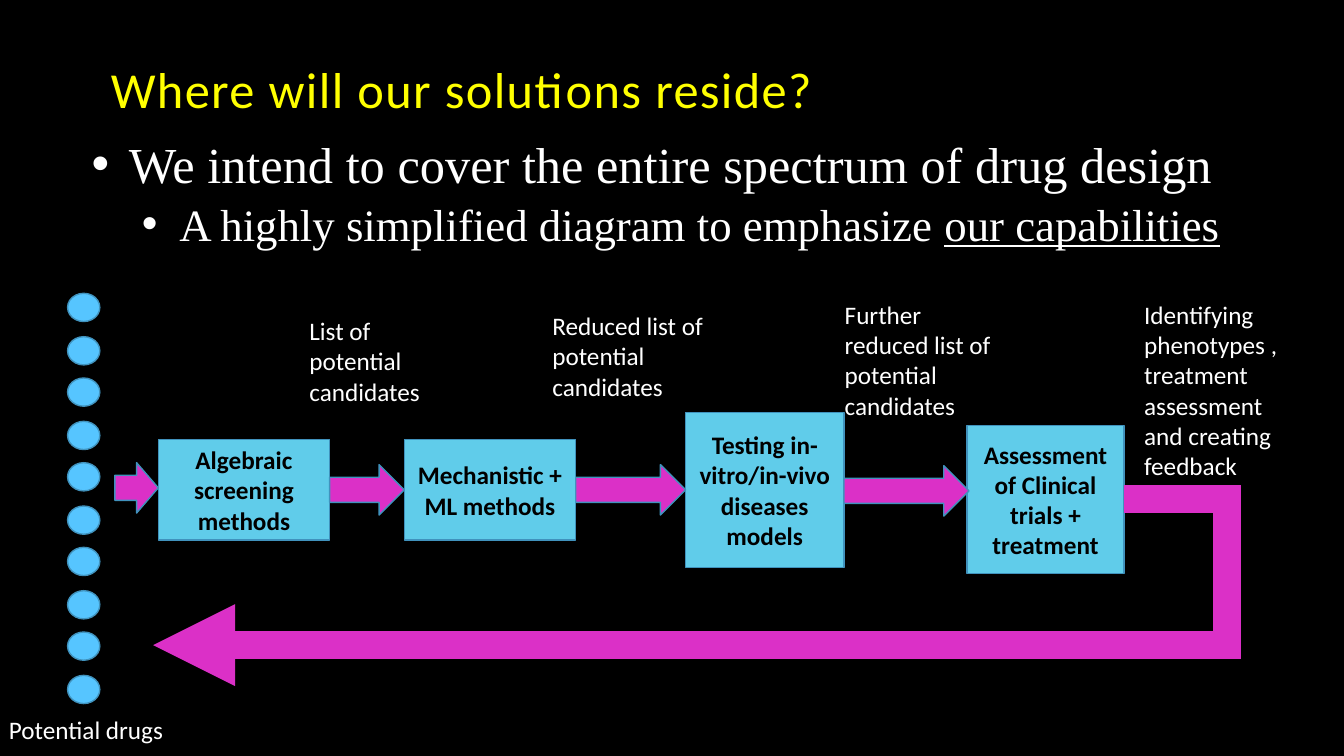
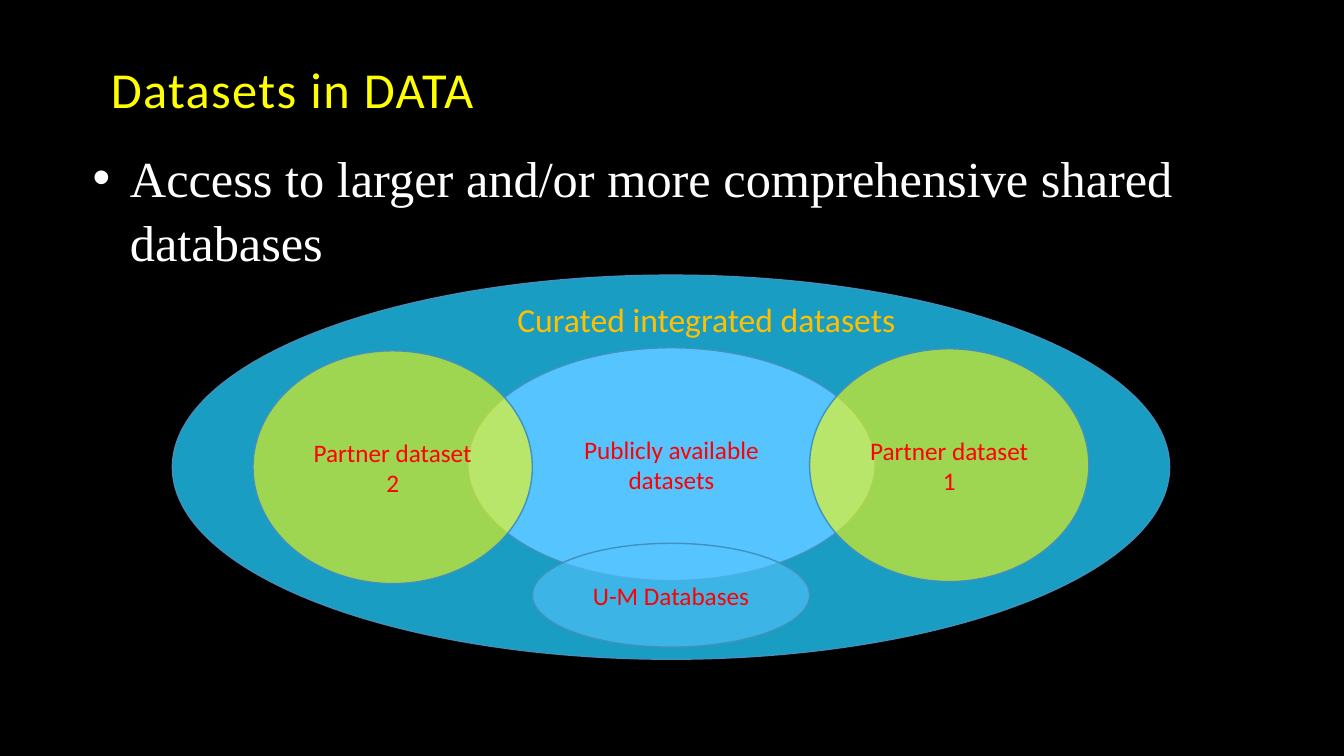
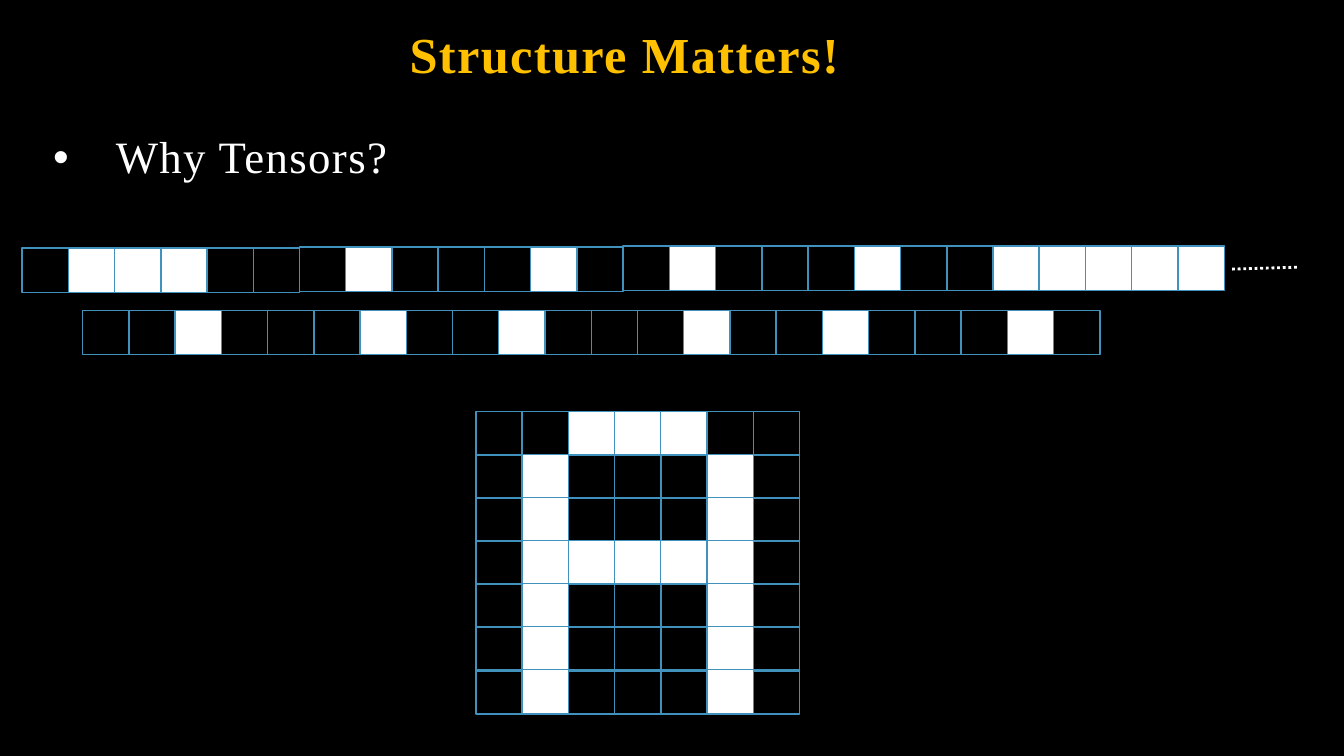
from lxml import etree
from pptx import Presentation
from pptx.dml.color import RGBColor
from pptx.enum.dml import MSO_LINE
from pptx.enum.shapes import MSO_CONNECTOR, MSO_SHAPE
from pptx.enum.text import MSO_ANCHOR, PP_ALIGN
from pptx.oxml.ns import qn
from pptx.util import Inches, Pt

BLACK = RGBColor(0x00, 0x00, 0x00)
WHITE = RGBColor(0xFF, 0xFF, 0xFF)
YELLOW = RGBColor(0xFF, 0xFF, 0x00)
GOLD = RGBColor(0xFF, 0xC0, 0x00)
RED = RGBColor(0xFF, 0x00, 0x00)
MAGENTA = RGBColor(0xDB, 0x30, 0xC7)
SKY = RGBColor(0x56, 0xC5, 0xFF)
CYAN = RGBColor(0x60, 0xCC, 0xEA)
TEAL = RGBColor(0x19, 0x9D, 0xC3)
OUTLINE = RGBColor(0x40, 0x92, 0xBD)
SANS, SERIF = "Calibri", "Times New Roman"


def add_shape(s, kind, box, fill=None, alpha=100):
    """Outlined shape; alpha is the fill's opacity in percent."""
    sp = s.shapes.add_shape(kind, *map(Inches, box))
    sp.shadow.inherit = False
    sp.line.color.rgb = OUTLINE
    sp.line.width = Pt(1)
    if fill is None:
        sp.fill.background()
        return sp
    sp.fill.solid()
    sp.fill.fore_color.rgb = fill
    if alpha < 100:
        color = sp._element.spPr.find(qn("a:solidFill"))[0]
        etree.SubElement(color, qn("a:alpha"), val=str(alpha * 1000))
    return sp


def add_text(sp, text, size, color, font=SANS, bold=False, align=PP_ALIGN.LEFT,
             anchor=MSO_ANCHOR.TOP, tracking=0, leading=None, bullet=None):
    """Add a paragraph; a newline is a line break, bullet is (left, hanging) inches."""
    tf = sp.text_frame
    tf.word_wrap = True
    tf.vertical_anchor = anchor
    p = tf.add_paragraph() if tf.text else tf.paragraphs[0]
    p.alignment = align
    if leading:
        p.line_spacing = leading
    if bullet:
        left, hanging = bullet
        pPr = p._p.get_or_add_pPr()
        pPr.set("marL", str(Inches(left)))
        pPr.set("indent", str(-Inches(hanging)))
        etree.SubElement(pPr, qn("a:buFont"), typeface="Arial")
        etree.SubElement(pPr, qn("a:buChar"), char="•")
    for i, line in enumerate(text.split("\n")):
        if i:
            p.add_line_break()
        r = p.add_run()
        r.text = line
        r.font.size = Pt(size)
        r.font.name = font
        r.font.bold = bold
        r.font.color.rgb = color
        if tracking:
            r._r.get_or_add_rPr().set("spc", str(tracking * 100))
    return p


prs = Presentation()
prs.slide_width, prs.slide_height = Inches(13.33), Inches(7.5)
background = prs.slide_master.background.fill
background.solid()
background.fore_color.rgb = BLACK

# Slides and their titles
TITLE_BOX = (1, 0, 11.32, 1.23)
titles = [
    ("Where will our solutions reside?", TITLE_BOX, YELLOW, SANS, False, PP_ALIGN.LEFT),
    ("Datasets in DATA", TITLE_BOX, YELLOW, SANS, False, PP_ALIGN.LEFT),
    ("Structure Matters!", (0.7, 0, 10.99, 0.89), GOLD, SERIF, True, PP_ALIGN.CENTER),
]
slides = []
for text, box, color, font, bold, align in titles:
    s = prs.slides.add_slide(prs.slide_layouts[6])
    add_text(s.shapes.add_textbox(*map(Inches, box)), text, 36, color, font, bold,
             align, MSO_ANCHOR.BOTTOM, tracking=1, leading=0.9)
    slides.append(s)
pipeline, datasets, tensors = slides

# Bulleted text
bullets = [
    (pipeline, (0.81, 1.18, 11.5, 1.25),
     "We intend to cover the entire spectrum of drug design"),
    (datasets, (0.82, 1.32, 12.11, 1.31),
     "Access to larger and/or more comprehensive shared databases"),
]
for s, box, text in bullets:
    body = s.shapes.add_textbox(*map(Inches, box))
    body.text_frame.margin_top = Inches(0.1)
    add_text(body, text, 36, WHITE, SERIF, leading=1.06, bullet=(0.37, 0.37))
    if s is pipeline:
        p = add_text(body, "A highly simplified diagram to emphasize ", 32, WHITE, SERIF,
                     leading=1.06, bullet=(0.87, 0.37))
        p.level = 1
        r = p.add_run()
        r.text = "our capabilities"
        r.font.size = Pt(32)
        r.font.name = SERIF
        r.font.color.rgb = WHITE
        r.font.underline = True

# Drug design pipeline
steps = [
    ("Algebraic screening methods", (1.57, 4.36, 1.7, 1)),
    ("Mechanistic + ML methods", (4.01, 4.36, 1.7, 1)),
    ("Testing in-vitro/in-vivo diseases models", (6.8, 4.09, 1.57, 1.54)),
    ("Assessment of Clinical trials + treatment", (9.59, 4.22, 1.56, 1.47)),
]
for text, box in steps:
    add_text(add_shape(pipeline, MSO_SHAPE.RECTANGLE, box, CYAN), text, 18, BLACK,
             bold=True, align=PP_ALIGN.CENTER, anchor=MSO_ANCHOR.MIDDLE)

for left, top, width in [(1.14, 4.59, 0.43), (3.27, 4.61, 0.74),
                         (5.71, 4.61, 1.09), (8.37, 4.62, 1.24)]:
    add_shape(pipeline, MSO_SHAPE.RIGHT_ARROW, (left, top, width, 0.5), MAGENTA)

for pair in range(5):
    for offset in (0, 0.43):
        top = 2.91 + 0.84 * pair + offset
        add_shape(pipeline, MSO_SHAPE.OVAL, (0.67, top, 0.32, 0.28), SKY)

labels = [
    ("Potential drugs", (-0.01, 7.04, 1.78, 0.4)),
    ("List of potential candidates", (2.97, 3.08, 1.74, 1.01)),
    ("Reduced list of potential candidates", (5.38, 3.03, 1.74, 1.01)),
    ("Further reduced list of potential candidates", (8.28, 2.92, 1.74, 1.31)),
    ("Identifying phenotypes , treatment assessment and creating feedback",
     (11.25, 2.92, 1.74, 1.92)),
]
for text, box in labels:
    add_text(pipeline.shapes.add_textbox(*map(Inches, box)), text, 18, WHITE)

feedback = pipeline.shapes.add_connector(
    MSO_CONNECTOR.ELBOW, Inches(11.15), Inches(4.95), Inches(1.52), Inches(6.4))
feedback.line.color.rgb = MAGENTA
feedback.line.width = Pt(19.5)
ln = feedback.line._get_or_add_ln()
etree.SubElement(ln, qn("a:miter"), lim="800000")
etree.SubElement(ln, qn("a:tailEnd"), type="triangle")
geometry = feedback._element.spPr.find(qn("a:prstGeom"))
guides = geometry.find(qn("a:avLst"))
if guides is None:
    guides = etree.SubElement(geometry, qn("a:avLst"))
etree.SubElement(guides, qn("a:gd"), name="adj1", fmla="val -10600")

# Overlapping datasets
add_shape(datasets, MSO_SHAPE.OVAL, (1.71, 2.73, 9.89, 3.81), TEAL)
sources = [
    ("Publicly available\ndatasets", (4.64, 3.45, 4.04, 2.31), SKY, 100),
    ("Partner dataset\n1", (8.03, 3.46, 2.77, 2.31), YELLOW, 58),
    ("Partner dataset\n2", (2.51, 3.48, 2.77, 2.31), YELLOW, 58),
    ("U-M Databases", (5.28, 5.39, 2.75, 1.03), SKY, 58),
]
for text, box, fill, alpha in sources:
    add_text(add_shape(datasets, MSO_SHAPE.OVAL, box, fill, alpha), text, 18, RED,
             align=PP_ALIGN.CENTER, anchor=MSO_ANCHOR.MIDDLE)
caption = datasets.shapes.add_textbox(Inches(4.96), Inches(2.92), Inches(4.09), Inches(0.5))
add_text(caption, "Curated integrated datasets", 24, GOLD, align=PP_ALIGN.CENTER)

# Letter A as a grid, and the same pixels unrolled into strips
CELL_PITCH, ROW_PITCH = 3.21 / 7, 2.99 / 7
LEGS = "0100010"
letter = ["0011100", LEGS, LEGS, "0111110", LEGS, LEGS, LEGS]
strips = [
    (0.22, 2.46, "011100"),
    (2.97, 2.45, LEGS),
    (6.18, 2.44, LEGS + "011111"),
    (0.82, 3.08, "0" + LEGS + LEGS + LEGS),
]
grid = [(4.72, 4.08 + i * ROW_PITCH, bits) for i, bits in enumerate(letter)]
for left, top, bits in grid + strips:
    for i, bit in enumerate(bits):
        add_shape(tensors, MSO_SHAPE.RECTANGLE, (left + i * CELL_PITCH, top, 0.46, 0.44),
                  WHITE if bit == "1" else None)

dots = tensors.shapes.add_connector(
    MSO_CONNECTOR.STRAIGHT, Inches(12.22), Inches(2.67), Inches(12.89), Inches(2.65))
dots.line.color.rgb = WHITE
dots.line.width = Pt(2)
dots.line.dash_style = MSO_LINE.ROUND_DOT
for connector in (feedback, dots):
    etree.SubElement(connector._element.spPr, qn("a:effectLst"))

question = tensors.shapes.add_textbox(Inches(0.43), Inches(1.18), Inches(11.5), Inches(0.69))
add_text(question, "Why Tensors?", 32, WHITE, SERIF, anchor=MSO_ANCHOR.BOTTOM,
         tracking=1, leading=0.9, bullet=(0.62, 0.62))

prs.save("out.pptx")
